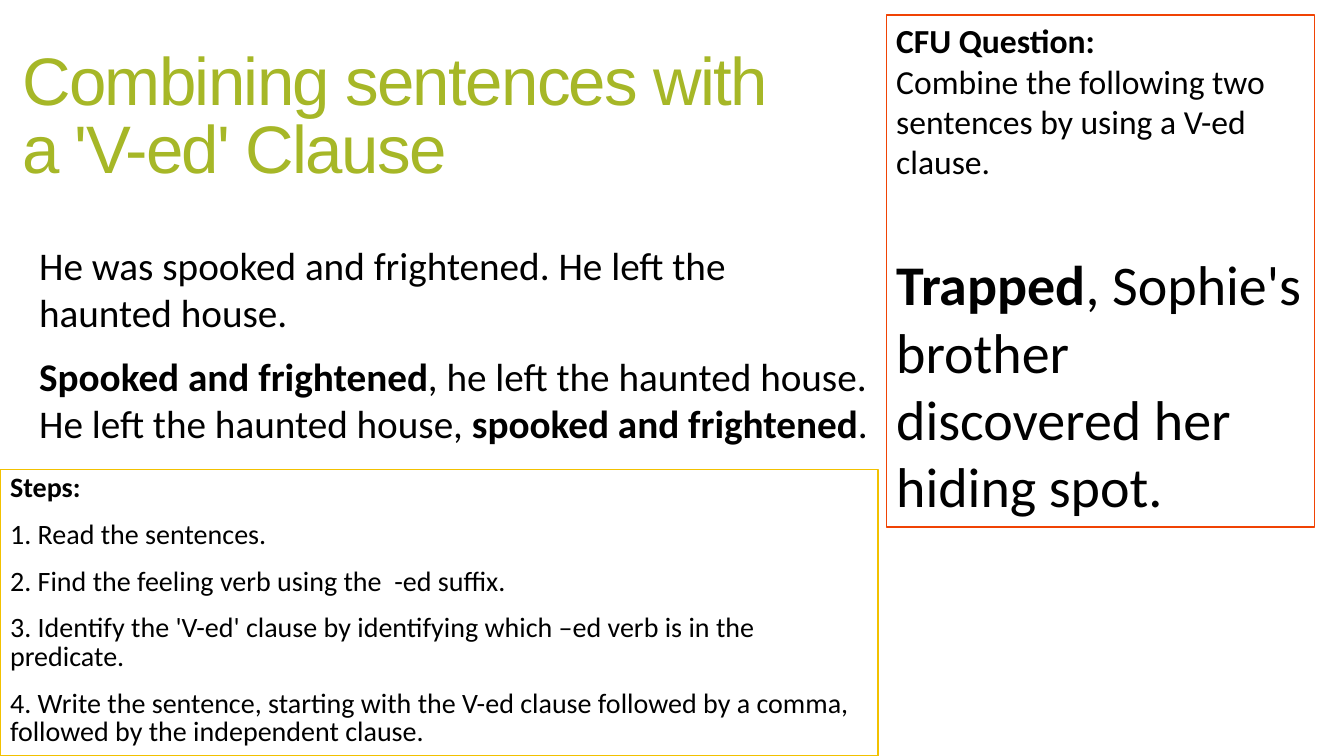
import pptx
import pptx.dml.color
import pptx.enum.text
import pptx.oxml
import pptx.oxml.ns
import pptx.util

Inches = pptx.util.Inches
Pt = pptx.util.Pt
ALIGN = pptx.enum.text.PP_ALIGN
ANCHOR = pptx.enum.text.MSO_ANCHOR

COLORS = {
    "text": "000000",
    "title": "A6B727",
    "panel": "FFFFFF",
    "steps": "F2C100",
    "question": "F04304",
}


def rgb(name):
    return pptx.dml.color.RGBColor.from_string(COLORS[name])


class LessonSlide:
    """Holds the text style and the slide being built."""

    base = {"name": "Calibri", "bold": False}

    def __init__(self, presentation):
        self.slide = presentation.slides.add_slide(presentation.slide_layouts[1])

    def fill_text(self, shape, paragraphs, size, color="text", anchor=ANCHOR.TOP,
                  font=None, paragraph_format=None):
        """Each paragraph is a list of (text, font values) runs."""
        frame = shape.text_frame
        frame_values = {"word_wrap": True, "vertical_anchor": anchor,
                        "auto_size": pptx.enum.text.MSO_AUTO_SIZE.NONE}
        for key, value in frame_values.items():
            setattr(frame, key, value)
        paragraph_values = {"alignment": ALIGN.LEFT, "space_before": Pt(0),
                            **(paragraph_format or {})}
        for index, runs in enumerate(paragraphs):
            paragraph = frame.add_paragraph() if index else frame.paragraphs[0]
            for key, value in paragraph_values.items():
                setattr(paragraph, key, value)
            for text, run_font in runs:
                run = paragraph.add_run()
                run.text = text
                values = {**self.base, "size": Pt(size), **(font or {}), **run_font}
                for key, value in values.items():
                    setattr(run.font, key, value)
                run.font.color.rgb = rgb(color)
        return frame

    def place(self, shape, box):
        for key, value in zip(("left", "top", "width", "height"), box):
            setattr(shape, key, Inches(value))
        return shape

    def outline(self, shape, line):
        shape.fill.solid()
        shape.fill.fore_color.rgb = rgb("panel")
        shape.line.color.rgb = rgb(line)
        shape.line.width = Pt(1)

    def title(self, box, text):
        shape = self.place(self.slide.shapes.title, box)
        frame = self.fill_text(shape, [[(text, {})]], 48, "title", ANCHOR.MIDDLE,
                               {"name": "Arial"}, {"line_spacing": 0.85})
        # Tighter letter spacing
        frame.paragraphs[0].runs[0]._r.get_or_add_rPr().set("spc", "-120")

    def steps(self, box, paragraphs):
        shape = self.place(self.slide.placeholders[1], box)
        self.outline(shape, "steps")
        frame = self.fill_text(shape, paragraphs, 20, paragraph_format={
            "line_spacing": 0.85, "space_before": Pt(13)})
        # Plain lines without bullets or hanging indents
        for paragraph in frame.paragraphs:
            properties = paragraph._p.get_or_add_pPr()
            properties.set("marL", "0")
            properties.set("indent", "0")
            properties.append(pptx.oxml.parse_xml(
                "<a:buNone %s/>" % pptx.oxml.ns.nsdecls("a")))

    def text(self, box, paragraphs, size):
        shape = self.slide.shapes.add_textbox(*map(Inches, box))
        return shape, self.fill_text(shape, paragraphs, size)

    def question(self, box, paragraphs):
        shape, frame = self.text(box, paragraphs, 24)
        self.outline(shape, "question")
        # The answer stands one large line below the question
        frame.paragraphs[-1].space_before = Pt(49)


def main():
    presentation = pptx.Presentation()
    presentation.slide_width = Inches(13.33)
    presentation.slide_height = Inches(7.5)
    lesson = LessonSlide(presentation)
    bold = {"bold": True}
    answer = {"size": Pt(40)}

    # Heading
    lesson.title((0.12, -0.19, 7.67, 2.74),
                 "Combining sentences with a 'V-ed' Clause")

    # Steps
    lesson.steps((0, 4.66, 8.71, 2.84), [
        [("Steps:", bold)],
        [("1. Read the sentences.", {})],
        [("2. Find the feeling verb using the  -ed suffix.", {})],
        [("3. Identify the 'V-ed' clause by identifying which –ed verb is "
          "in the predicate. ", {})],
        [("4. Write the sentence, starting with the V-ed clause followed by a "
          "comma, followed by the independent clause.", {})],
    ])

    # Example sentences and their combined forms
    lesson.text((0.29, 2.34, 7.87, 1.04), [
        [("He was spooked and frightened. He left the haunted house.", {})],
    ], 28)
    lesson.text((0.29, 3.45, 9.37, 1.04), [
        [("Spooked and frightened", bold), (", he left the haunted house.", {})],
        [("He left the haunted house, ", {}), ("spooked and frightened", bold),
         (".", {})],
    ], 28)

    # Check for understanding
    lesson.question((8.79, 0.15, 4.25, 5.08), [
        [("CFU Question:", bold)],
        [("Combine the following two", {})],
        [("sentences by using a V-ed clause.", {})],
        [("Trapped", {**answer, **bold}),
         (", Sophie's brother discovered her hiding spot.", answer)],
    ])

    presentation.save("out.pptx")


if __name__ == "__main__":
    main()
